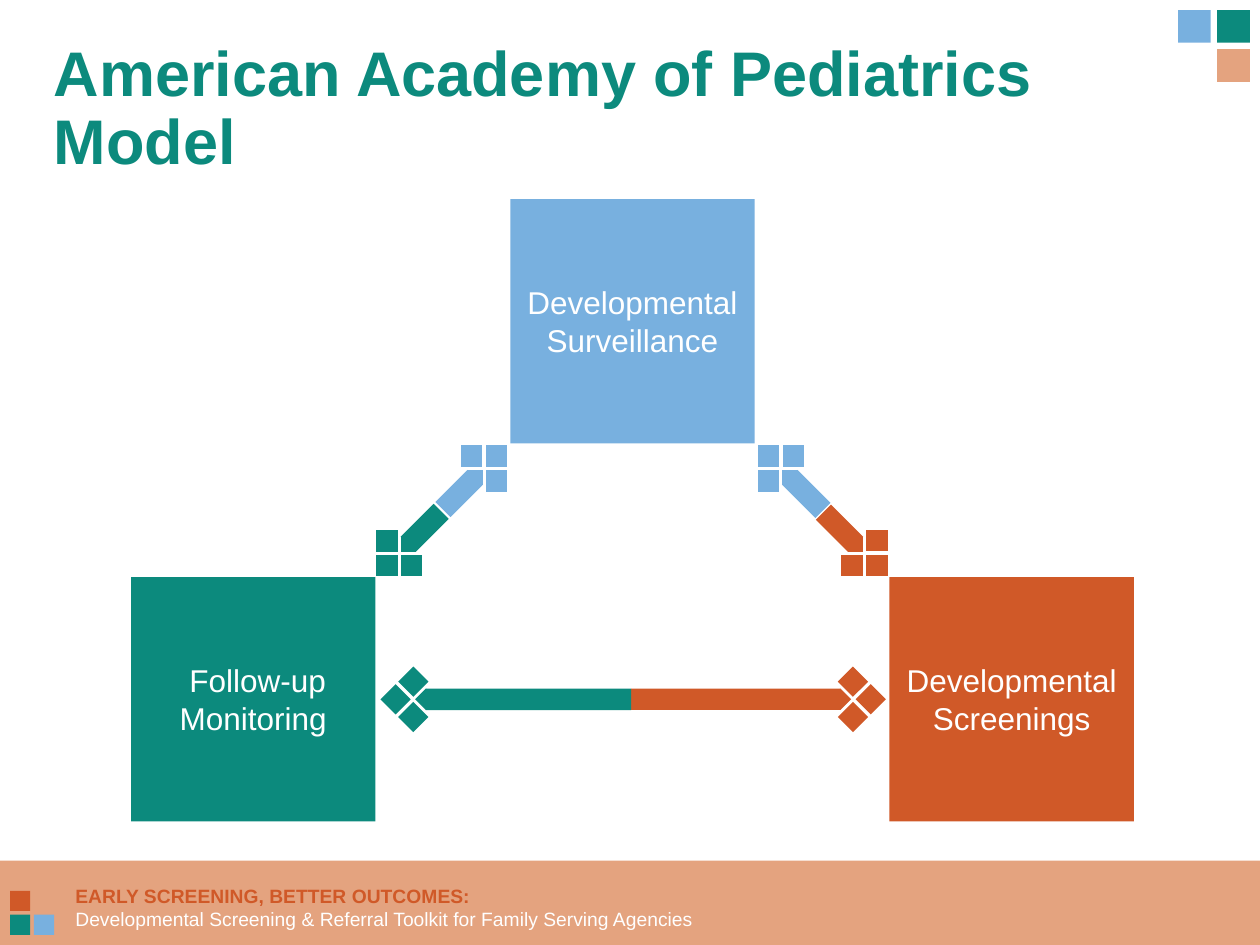
from math import cos, radians, sin

from pptx import Presentation
from pptx.dml.color import RGBColor
from pptx.enum.shapes import MSO_SHAPE
from pptx.enum.text import MSO_ANCHOR, PP_ALIGN
from pptx.util import Inches, Pt

RECT, DIAMOND = MSO_SHAPE.RECTANGLE, MSO_SHAPE.DIAMOND
MIDDLE, TOP = MSO_ANCHOR.MIDDLE, MSO_ANCHOR.TOP
CENTER, LEFT = PP_ALIGN.CENTER, PP_ALIGN.LEFT

COLORS = {"green": "0C8A7D", "blue": "78B0DF", "orange": "D05928",
          "peach": "E4A37F", "white": "FFFFFF"}
WIDTH, HEIGHT = 10, 7.5

TITLE = "American Academy of Pediatrics Model"
FOOTER = ["EARLY SCREENING, BETTER OUTCOMES:",
          "Developmental Screening & Referral Toolkit for Family Serving Agencies"]
# lines, colour, column, row
BOXES = [([" Follow-up", "Monitoring"], "green", 0, 1),
         (["Developmental Screenings"], "orange", 2, 1),
         (["Developmental Surveillance"], "blue", 1, 0)]
# colour, centre of the tip, direction in degrees, bar length
ARROW_HALVES = [("orange", (6.96, 4.49), 45, 0.36),
                ("blue", (6.1, 3.62), 225, 0.37),
                ("blue", (3.94, 3.62), 315, 0.36),
                ("green", (3.07, 4.49), 135, 0.37),
                ("orange", (6.91, 5.55), 0, 1.66),
                ("green", (3.14, 5.55), 180, 1.63)]
# left, top, square size, pitch, then colour, column, row of each square
LOGOS = [(9.35, 0.08, 0.26, 0.31,
          [("peach", 1, 1), ("green", 1, 0), ("blue", 0, 0)]),
         (0.08, 7.07, 0.16, 0.19,
          [("orange", 0, 0), ("green", 0, 1), ("blue", 1, 1)])]

BOX, STEP = 1.94, (3.01, 3)
GRID_LEFT, GRID_TOP = 1.04, 1.58
TIP, NECK, BAR = 0.24, 0.17, 0.17
SIDE, SETBACK = 0.14, 0.24

prs = Presentation()
prs.slide_width, prs.slide_height = Inches(WIDTH), Inches(HEIGHT)
slide = prs.slides.add_slide(prs.slide_layouts[6])


def add_block(kind, color, left, top, width, height, rotation=0):
    sp = slide.shapes.add_shape(kind, *map(Inches, (left, top, width, height)))
    sp.shadow.inherit = False
    sp.fill.solid()
    sp.fill.fore_color.rgb = RGBColor.from_string(COLORS[color])
    sp.line.fill.background()
    sp.rotation = rotation
    return sp


def write(sp, lines, anchor, align, spacing=None):
    """Fill a shape with paragraphs given as (text, size, colour, bold)."""
    tf = sp.text_frame
    tf.word_wrap = True
    tf.vertical_anchor = anchor
    for i, (text, size, color, bold) in enumerate(lines):
        p = tf.add_paragraph() if i else tf.paragraphs[0]
        p.alignment, p.line_spacing = align, spacing
        r = p.add_run()
        r.text = text
        for name, value in {"name": "Arial", "size": Pt(size), "bold": bold}.items():
            setattr(r.font, name, value)
        r.font.color.rgb = RGBColor.from_string(COLORS[color])


def add_text(left, top, width, height, *args):
    write(slide.shapes.add_textbox(*map(Inches, (left, top, width, height))), *args)


def add_arrow_half(color, tip, angle, length):
    """Three diamonds, a neck and a bar, placed along the arrow's direction."""
    c, s = cos(radians(angle)), sin(radians(angle))
    parts = [(DIAMOND, -SIDE, -SIDE, TIP, TIP),
             (DIAMOND, 0, 0, TIP, TIP),
             (DIAMOND, -SIDE, SIDE, TIP, TIP),
             (DIAMOND, -SETBACK, 0, NECK, NECK),
             (RECT, -SETBACK - length / 2, 0, length, BAR)]
    for kind, along, across, w, h in parts:
        x = tip[0] + along * c - across * s
        y = tip[1] + along * s + across * c
        add_block(kind, color, x - w / 2, y - h / 2, w, h, angle)


add_block(RECT, "peach", 0, 6.83, WIDTH, HEIGHT - 6.83)
add_text(0.5, 6.97, 8.67, 0.47,
         [(FOOTER[0], 11, "orange", True), (FOOTER[1], 11, "white", False)], TOP, LEFT)
for left, top, size, pitch, squares in LOGOS:
    for color, col, row in squares:
        add_block(RECT, color, left + col * pitch, top + row * pitch, size, size)

add_text(0.33, 0.25, 8.67, 1.25, [(TITLE, 36, "green", True)], MIDDLE, LEFT, 0.9)
for lines, color, col, row in BOXES:
    sp = add_block(RECT, color, GRID_LEFT + col * STEP[0],
                   GRID_TOP + row * STEP[1], BOX, BOX)
    write(sp, [(line, 18, "white", False) for line in lines], MIDDLE, CENTER)
for half in ARROW_HALVES:
    add_arrow_half(*half)

prs.save("out.pptx")
